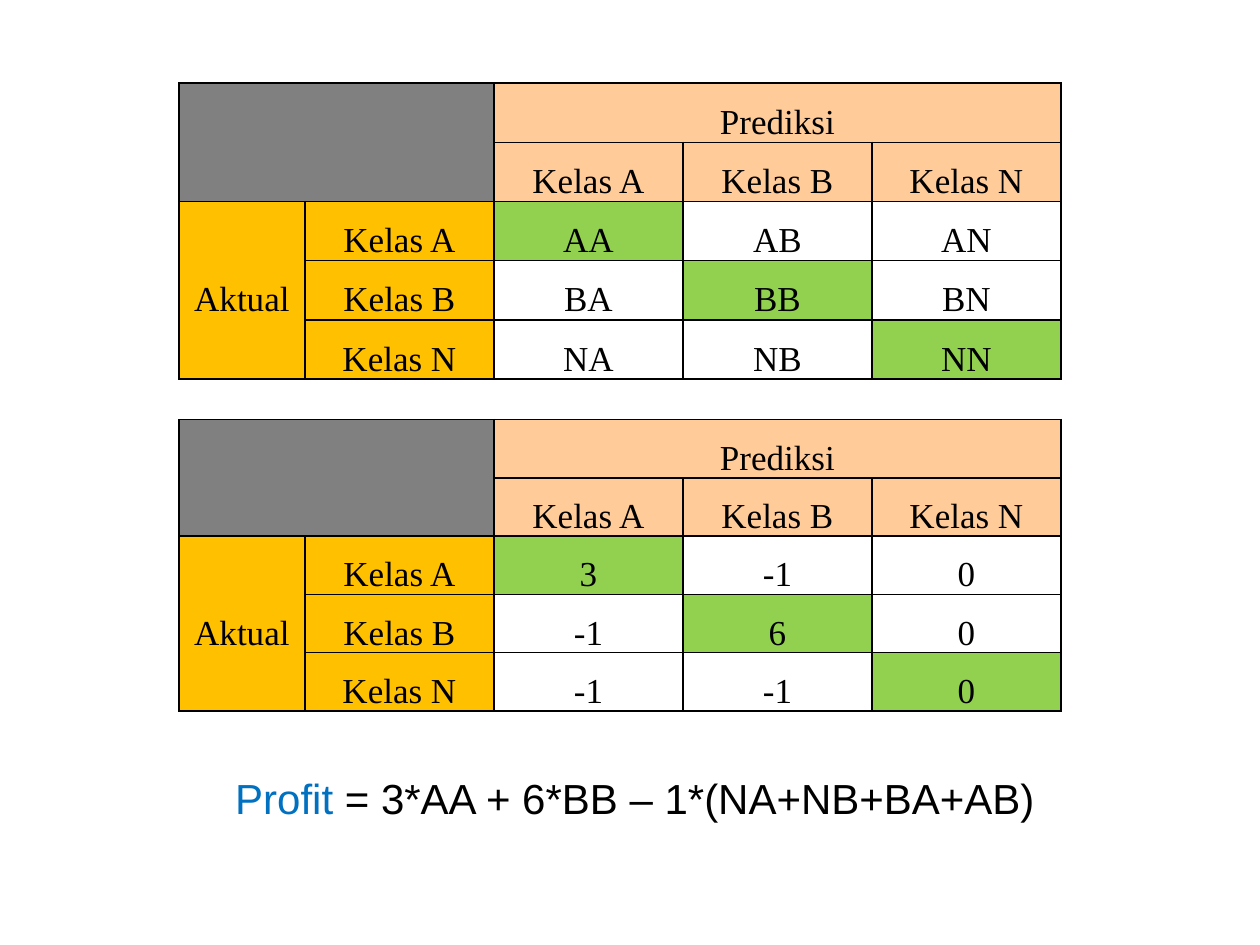
from lxml.etree import SubElement
from pptx import Presentation
from pptx.dml.color import RGBColor
from pptx.enum.text import MSO_ANCHOR, MSO_AUTO_SIZE, PP_ALIGN
from pptx.oxml.ns import qn
from pptx.util import Inches, Pt

BLACK = RGBColor(0x00, 0x00, 0x00)
GRAY = RGBColor(0x80, 0x80, 0x80)
PEACH = RGBColor(0xFF, 0xCC, 0x99)
AMBER = RGBColor(0xFF, 0xC0, 0x00)
GREEN = RGBColor(0x92, 0xD0, 0x50)
BLUE = RGBColor(0x00, 0x70, 0xC0)

NAMES = ["Kelas A", "Kelas B", "Kelas N"]
CODES = [["AA", "AB", "AN"], ["BA", "BB", "BN"], ["NA", "NB", "NN"]]
COSTS = [["3", "-1", "0"], ["-1", "6", "0"], ["-1", "-1", "0"]]
WIDTHS = [1, 1.5, 1.5, 1.5, 1.5]
HEAD = 2  # header rows, and header columns


def tint(row, col):
    """Fill colour by place in the matrix; None for a plain cell."""
    if row < HEAD:
        return GRAY if col < HEAD else PEACH
    if col < HEAD:
        return AMBER
    return GREEN if row == col else None


class Deck:
    """Holds the text style and the current slide."""

    def __init__(self, slide):
        self.slide = slide
        self.serif = "Times New Roman"
        self.sans = "Arial"

    def run(self, para, text, font, size, color):
        run = para.add_run()
        run.text = text
        run.font.name = font
        run.font.size = Pt(size)
        run.font.color.rgb = color

    def border(self, cell):
        props = cell._tc.get_or_add_tcPr()
        for side in ("lnL", "lnR", "lnT", "lnB"):
            line = SubElement(props, qn(f"a:{side}"), w=str(Pt(1)))
            fill = SubElement(line, qn("a:solidFill"))
            SubElement(fill, qn("a:srgbClr"), val=str(BLACK))

    def cell(self, cell, text, color):
        self.border(cell)
        if color is None:
            cell.fill.background()
        else:
            cell.fill.solid()
            cell.fill.fore_color.rgb = color
        cell.vertical_anchor = MSO_ANCHOR.MIDDLE
        cell.margin_left = cell.margin_right = Inches(0.07)
        cell.margin_top = cell.margin_bottom = 0
        if text:
            para = cell.text_frame.paragraphs[0]
            para.alignment = PP_ALIGN.CENTER
            para.line_spacing = 1.5
            self.run(para, text, self.serif, 20, BLACK)

    def matrix(self, top, height, values):
        """Draw a class matrix: predictions across, actual classes down."""
        rows = [["", "", "Prediksi", "", ""], ["", "", *NAMES]]
        for i, (name, line) in enumerate(zip(NAMES, values)):
            rows.append(["" if i else "Aktual", name, *line])
        size = len(rows)
        table = self.slide.shapes.add_table(
            size, len(WIDTHS), Inches(1.42), Inches(top),
            Inches(sum(WIDTHS)), Inches(height * size)).table
        table.first_row = table.horz_banding = False
        for col, width in zip(table.columns, WIDTHS):
            col.width = Inches(width)
        for r, line in enumerate(rows):
            table.rows[r].height = Inches(height)
            for c, text in enumerate(line):
                self.cell(table.cell(r, c), text, tint(r, c))
        for start, end in (((0, 0), (1, 1)), ((0, 2), (0, 4)), ((2, 0), (4, 0))):
            table.cell(*start).merge(table.cell(*end))

    def text(self, left, top, width, height, parts):
        box = self.slide.shapes.add_textbox(
            Inches(left), Inches(top), Inches(width), Inches(height))
        frame = box.text_frame
        frame.word_wrap = True
        frame.auto_size = MSO_AUTO_SIZE.SHAPE_TO_FIT_TEXT
        para = frame.paragraphs[0]
        para.alignment = PP_ALIGN.CENTER
        for words, color in parts:
            self.run(para, words, self.sans, 24, color)


def main():
    show = Presentation()
    show.slide_width, show.slide_height = Inches(10), Inches(7.5)
    deck = Deck(show.slides.add_slide(show.slide_layouts[6]))
    deck.matrix(0.66, 0.47, CODES)
    deck.matrix(3.33, 0.46, COSTS)
    deck.text(1, 6.08, 8.08, 0.5, [
        ("Profit", BLUE), (" = 3*AA + 6*BB – 1*(NA+NB+BA+AB)", BLACK)])
    show.save("out.pptx")


if __name__ == "__main__":
    main()
